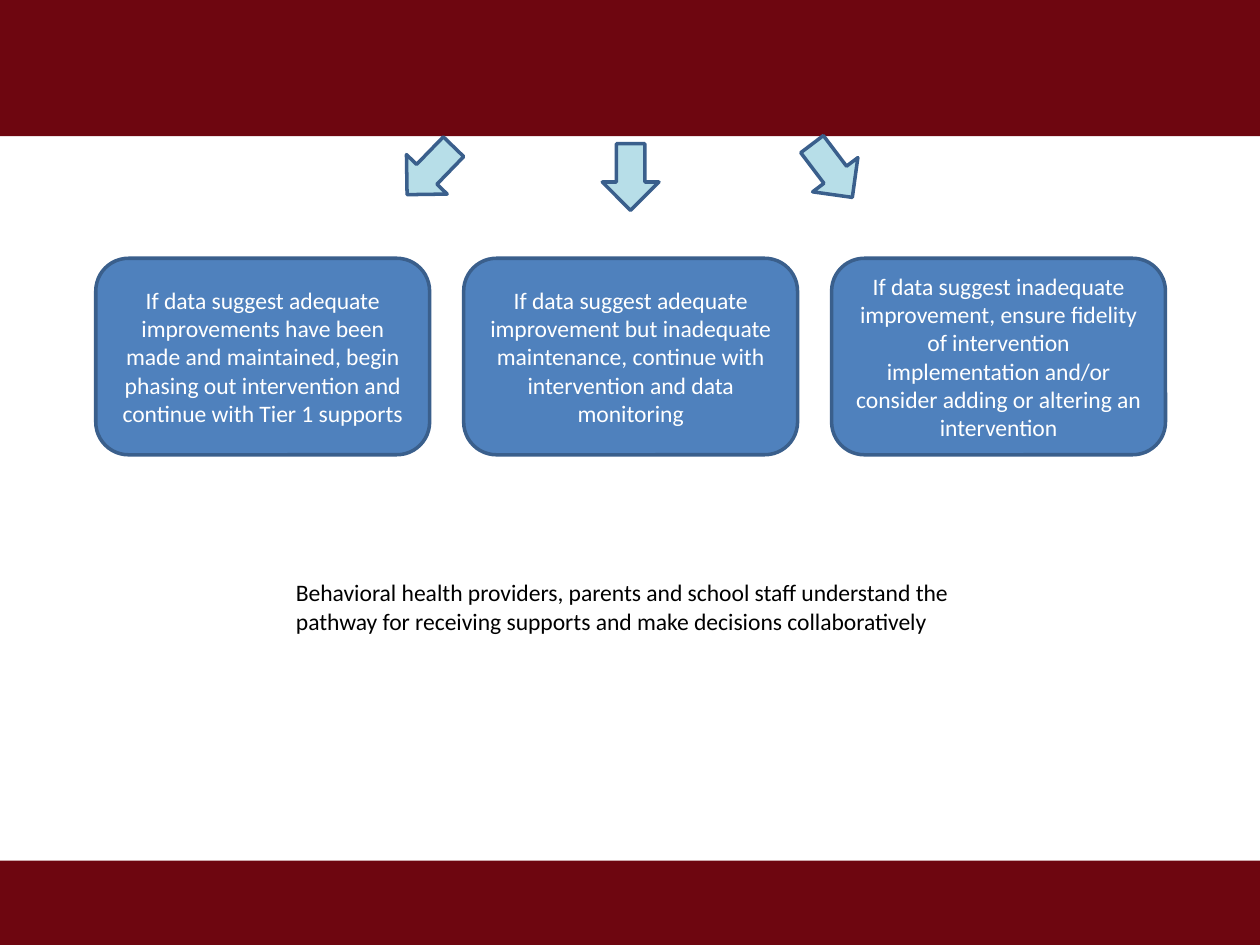
"""Build the slide showing three decision paths based on intervention data."""
from dataclasses import dataclass

from pptx import Presentation
from pptx.dml.color import RGBColor
from pptx.enum.shapes import MSO_SHAPE as Shape
from pptx.enum.text import MSO_ANCHOR as Anchor, PP_ALIGN as Align
from pptx.util import Inches, Pt

COLORS = {
    "band": "6E0610",
    "box": "4F81BD",
    "arrow": "B7DEE8",
    "outline": "3A5F8C",
    "light": "FFFFFF",
    "dark": "000000",
}
BOX_LEFT, BOX_STEP = 0.76, 2.92


@dataclass
class Item:
    left: float
    top: float
    width: float
    height: float
    text: str = ""
    rotation: float = 0


BANDS = [Item(0, 0, 10, 1.08), Item(0, 6.83, 10, 0.67)]
OUTCOMES = [
    "If data suggest adequate improvements have been made and maintained, "
    "begin phasing out intervention and continue with Tier 1 supports",
    "If data suggest adequate improvement but inadequate maintenance, "
    "continue with intervention and data monitoring",
    "If data suggest inadequate improvement, ensure fidelity of intervention "
    "implementation and/or consider adding or altering an intervention",
]
BOXES = [Item(BOX_LEFT + i * BOX_STEP, 2.05, 2.65, 1.56, text)
         for i, text in enumerate(OUTCOMES)]
ARROWS = [
    Item(4.78, 1.14, 0.45, 0.53),
    Item(3.19, 1.09, 0.45, 0.53, rotation=44.1),
    Item(6.38, 1.09, 0.45, 0.53, rotation=322.9),
]
SUMMARY = Item(
    2.25, 4.54, 5.52, 0.56,
    "Behavioral health providers, parents and school staff understand the "
    "pathway for receiving supports and make decisions collaboratively",
)


def rgb(name: str) -> RGBColor:
    return RGBColor.from_string(COLORS[name])


def bounds(item: Item) -> list[Inches]:
    return [Inches(v) for v in (item.left, item.top, item.width, item.height)]


def write(sp, text: str, color: str, align: Align) -> None:
    tf = sp.text_frame
    tf.word_wrap = True
    p = tf.paragraphs[0]
    p.text = text
    p.alignment = align
    p.font.name = "Calibri"
    p.font.size = Pt(13.5)
    p.font.color.rgb = rgb(color)


def draw(s, item: Item, kind: Shape, fill: str, outlined: bool = True) -> None:
    sp = s.shapes.add_shape(kind, *bounds(item))
    sp.shadow.inherit = False
    sp.rotation = item.rotation
    sp.fill.solid()
    sp.fill.fore_color.rgb = rgb(fill)
    if outlined:
        sp.line.color.rgb = rgb("outline")
        sp.line.width = Pt(2)
    else:
        sp.line.fill.background()
    if item.text:
        sp.text_frame.vertical_anchor = Anchor.MIDDLE
        write(sp, item.text, "light", Align.CENTER)


def main() -> None:
    prs = Presentation()
    prs.slide_width, prs.slide_height = Inches(10), Inches(7.5)
    s = prs.slides.add_slide(prs.slide_layouts[6])
    for band in BANDS:
        draw(s, band, Shape.RECTANGLE, "band", outlined=False)
    for box in BOXES:
        draw(s, box, Shape.ROUNDED_RECTANGLE, "box")
    for arrow in ARROWS:
        draw(s, arrow, Shape.DOWN_ARROW, "arrow")
    write(s.shapes.add_textbox(*bounds(SUMMARY)), SUMMARY.text, "dark", Align.LEFT)
    prs.save("out.pptx")


if __name__ == "__main__":
    main()
